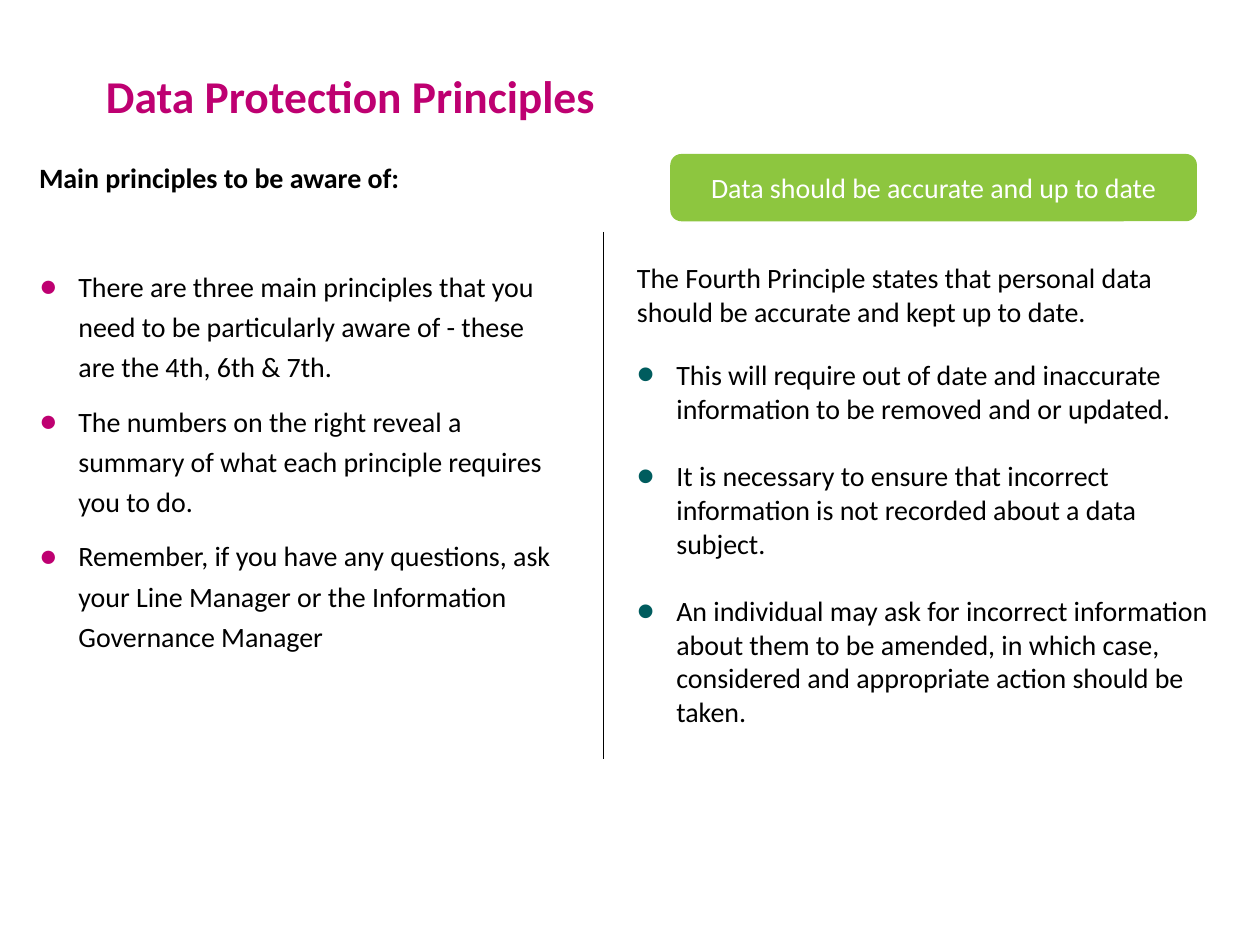
from lxml import etree
from pptx import Presentation
from pptx.dml.color import RGBColor
from pptx.enum.shapes import MSO_CONNECTOR, MSO_SHAPE
from pptx.enum.text import MSO_ANCHOR, MSO_AUTO_SIZE, PP_ALIGN
from pptx.oxml.ns import qn
from pptx.util import Pt

STRAIGHT = MSO_CONNECTOR.STRAIGHT
ROUNDED = MSO_SHAPE.ROUNDED_RECTANGLE
TOP, MIDDLE = MSO_ANCHOR.TOP, MSO_ANCHOR.MIDDLE
CENTER = PP_ALIGN.CENTER
NO_AUTOFIT = MSO_AUTO_SIZE.NONE

FONT = "Calibri"
BODY_SIZE = 16
HANGING = 22.5
MAGENTA, TEAL, GREEN = "BE0071", "005C5E", "8DC63F"
BLACK, WHITE = "000000", "FFFFFF"

TITLE = "Data Protection Principles"
BANNER = "Data should be accurate and up to date"
LEFT_HEADING = "Main principles to be aware of:"
LEFT_POINTS = [
    "There are three main principles that you need to be particularly aware of - these are the 4th, 6th & 7th.",
    "The numbers on the right reveal a summary of what each principle requires you to do.",
    "Remember, if you have any questions, ask your Line Manager or the Information Governance Manager",
]
RIGHT_INTRO = "The Fourth Principle states that personal data should be accurate and kept up to date."
RIGHT_POINTS = [
    "This will require out of date and inaccurate information to be removed and or updated.",
    "It is necessary to ensure that incorrect information is not recorded about a data subject.",
    "An individual may ask for incorrect information about them to be amended, "
    "in which case, considered and appropriate action should be taken.",
]

# Left, top, width, height in points
TITLE_AREA = (60.5, 39, 384.5, 29)
LEFT_AREA = (22.3, 88, 301.7, 323)
BANNER_AREA = (383, 88, 301, 38.5)
RIGHT_AREA = (364, 149, 339.5, 262)
DIVIDER = (345, 132.5, 345, 434)


def color(value):
    return RGBColor.from_string(value)


def points(values):
    return [Pt(value) for value in values]


def place(box, area):
    box.left, box.top, box.width, box.height = points(area)
    frame = box.text_frame
    frame.word_wrap = True
    frame.auto_size = NO_AUTOFIT
    frame.vertical_anchor = TOP
    frame.margin_left = frame.margin_top = frame.margin_right = frame.margin_bottom = 0


def set_bullet(para, mark, percent, tint):
    properties = para._p.get_or_add_pPr()
    properties.set("marL", str(Pt(HANGING)))
    properties.set("indent", str(-Pt(HANGING)))
    bullet_color = etree.SubElement(properties, qn("a:buClr"))
    etree.SubElement(bullet_color, qn("a:srgbClr"), val=tint)
    etree.SubElement(properties, qn("a:buSzPct"), val=str(percent * 1000))
    etree.SubElement(properties, qn("a:buFont"), typeface="Arial")
    etree.SubElement(properties, qn("a:buChar"), char=mark)


def set_plain(para):
    """Switch off the inherited bullet and indent."""
    properties = para._p.get_or_add_pPr()
    properties.set("marL", "0")
    properties.set("indent", "0")
    etree.SubElement(properties, qn("a:buNone"))


def set_font(para, size=BODY_SIZE, tint=BLACK, bold=False):
    para.font.name = FONT
    para.font.size = Pt(size)
    para.font.bold = bold
    para.font.color.rgb = color(tint)


def fill_list(box, lead, items, bullet, gaps, spacing, bold_lead):
    """Write a lead line and bulleted items, with a space before each item."""
    frame = box.text_frame
    for index, (text, gap) in enumerate(zip([lead] + items, [0] + gaps)):
        para = frame.add_paragraph() if index else frame.paragraphs[0]
        para.text = text
        para.line_spacing = spacing
        para.space_before = Pt(gap)
        if index:
            set_bullet(para, *bullet)
        else:
            set_plain(para)
        set_font(para, bold=bold_lead and index == 0)


def add_banner(page):
    banner = page.shapes.add_shape(ROUNDED, *points(BANNER_AREA))
    banner.shadow.inherit = False
    banner.fill.solid()
    banner.fill.fore_color.rgb = color(GREEN)
    banner.line.fill.background()
    banner.text_frame.word_wrap = True
    banner.text_frame.vertical_anchor = MIDDLE
    para = banner.text_frame.paragraphs[0]
    para.text = BANNER
    para.alignment = CENTER
    set_font(para, tint=WHITE)


def add_divider(page):
    divider = page.shapes.add_connector(STRAIGHT, *points(DIVIDER))
    divider.line.color.rgb = color(BLACK)
    divider.line.width = Pt(0.5)
    etree.SubElement(divider._element.spPr, qn("a:effectLst"))


def main():
    deck = Presentation()
    deck.slide_width, deck.slide_height = Pt(720), Pt(540)
    page = deck.slides.add_slide(deck.slide_layouts[1])

    title = page.shapes.title
    place(title, TITLE_AREA)
    para = title.text_frame.paragraphs[0]
    para.text = TITLE
    para.alignment = PP_ALIGN.LEFT
    set_font(para, 26, MAGENTA, True)

    left_list = page.placeholders[1]
    place(left_list, LEFT_AREA)
    fill_list(left_list, LEFT_HEADING, LEFT_POINTS, ("●", 110, MAGENTA),
              [39, 8, 8], 1.2, True)

    add_banner(page)
    add_divider(page)

    right_list = page.shapes.add_textbox(*points(RIGHT_AREA))
    place(right_list, RIGHT_AREA)
    fill_list(right_list, RIGHT_INTRO, RIGHT_POINTS, ("•", 180, TEAL),
              [17, 19.5, 19.5], 1.0, False)

    deck.save("out.pptx")


if __name__ == "__main__":
    main()
